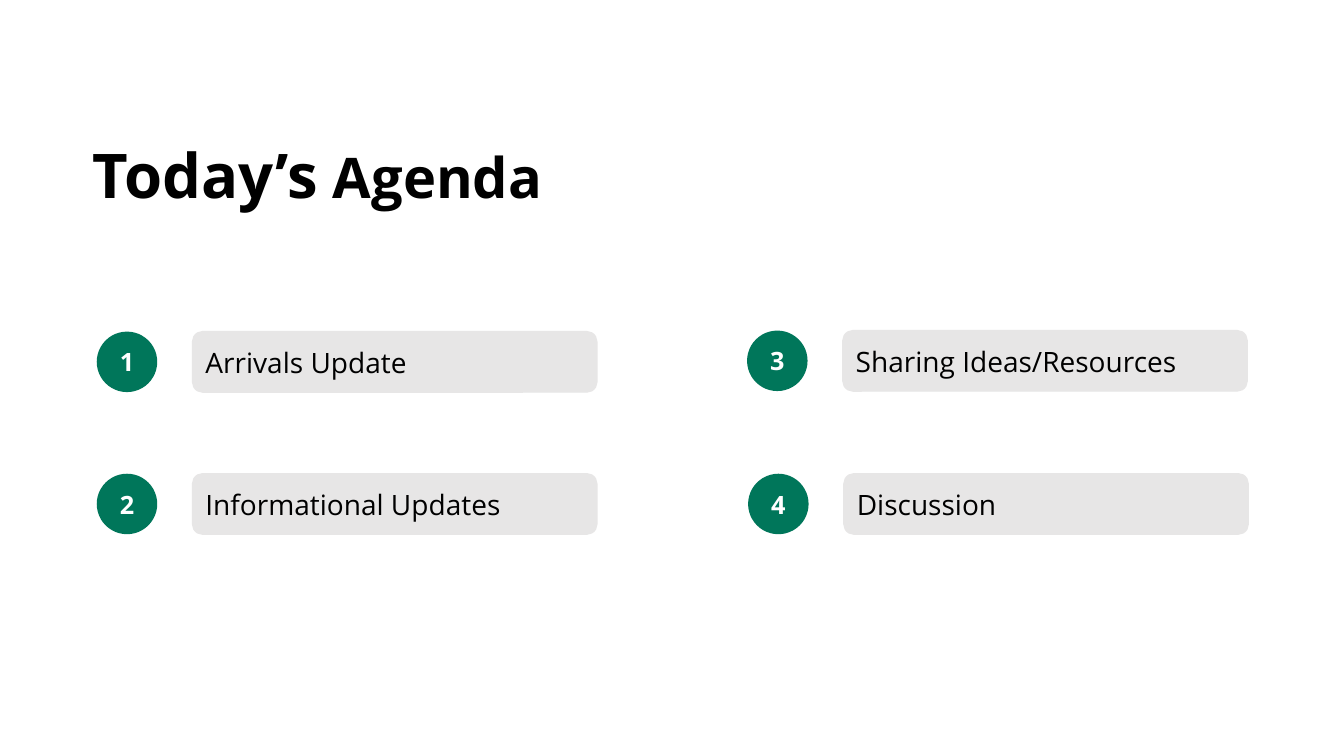
from pptx import Presentation
from pptx.dml.color import RGBColor
from pptx.enum.shapes import MSO_SHAPE
from pptx.enum.text import MSO_ANCHOR, MSO_AUTO_SIZE, PP_ALIGN
from pptx.util import Inches, Pt

OVAL, ROUND = MSO_SHAPE.OVAL, MSO_SHAPE.ROUNDED_RECTANGLE
MIDDLE, FIXED = MSO_ANCHOR.MIDDLE, MSO_AUTO_SIZE.NONE
LEFT, CENTER = PP_ALIGN.LEFT, PP_ALIGN.CENTER

COLORS = {"ink": "000000", "paper": "FFFFFF", "green": "00765A", "gray": "E7E6E6"}
FONT = "Open Sans"
SIZE = 0.6  # height of badges and bars

# Number, label, left, top
ITEMS = [
    ("1", "Arrivals Update", 0.96, 3.29),
    ("2", "Informational Updates", 0.96, 4.7),
    ("3", "Sharing Ideas/Resources", 7.41, 3.28),
    ("4", "Discussion", 7.42, 4.7),
]


class Deck:
    def __init__(self):
        self.prs = Presentation()
        self.prs.slide_width, self.prs.slide_height = Inches(13.33), Inches(7.5)
        self.slide = self.prs.slides.add_slide(self.prs.slide_layouts[5])

    def color(self, name):
        return RGBColor.from_string(COLORS[name])

    def label(self, shape, runs, color, bold, align):
        frame = shape.text_frame
        for key, value in {"word_wrap": True, "auto_size": FIXED,
                           "vertical_anchor": MIDDLE}.items():
            setattr(frame, key, value)
        para = frame.paragraphs[0]
        para.alignment = align
        for text, size in runs:
            run = para.add_run()
            run.text = text
            for key, value in {"name": FONT, "size": Pt(size), "bold": bold}.items():
                setattr(run.font, key, value)
            run.font.color.rgb = self.color(color)

    def title(self, runs, left, top, width, height):
        shape = self.slide.shapes.title
        box = {"left": left, "top": top, "width": width, "height": height}
        for key, value in box.items():
            setattr(shape, key, Inches(value))
        self.label(shape, runs, "ink", True, LEFT)

    def shape(self, kind, left, top, width, fill):
        shape = self.slide.shapes.add_shape(
            kind, Inches(left), Inches(top), Inches(width), Inches(SIZE))
        shape.shadow.inherit = False
        shape.fill.solid()
        shape.fill.fore_color.rgb = self.color(fill)
        return shape

    def badge(self, number, left, top):
        shape = self.shape(OVAL, left, top, SIZE, "green")
        shape.line.fill.background()
        self.label(shape, [(number, 18)], "paper", True, CENTER)

    def bar(self, text, left, top):
        shape = self.shape(ROUND, left, top, 4.01, "gray")
        shape.line.color.rgb = self.color("gray")
        shape.line.width = Pt(1)
        self.label(shape, [(text, 20)], "ink", False, LEFT)


def main():
    deck = Deck()

    # Heading
    deck.title([("Today’s", 44), (" Agenda", 40)], 0.82, 1.3, 7.28, 0.84)

    # Agenda items
    for number, text, left, top in ITEMS:
        deck.badge(number, left, top)
        deck.bar(text, left + 0.95, top)

    deck.prs.save("out.pptx")


if __name__ == "__main__":
    main()
